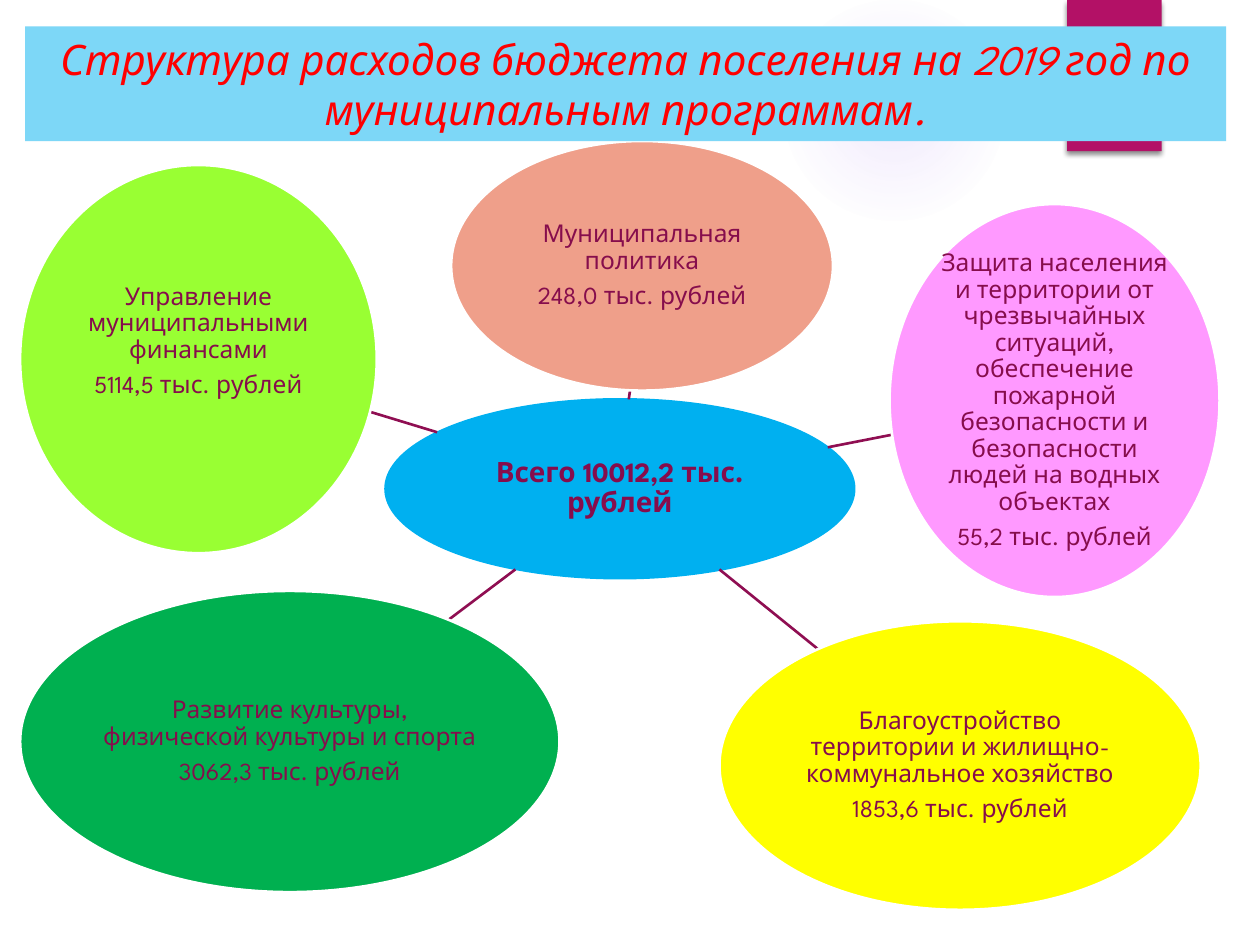
from lxml import etree
from pptx import Presentation
from pptx.dml.color import RGBColor
from pptx.enum import shapes, text
from pptx.oxml import parse_xml
from pptx.oxml.ns import nsdecls, qn
from pptx.util import Pt

FONT = "League Spartan"
WHITE = RGBColor(0xFF, 0xFF, 0xFF)
RED = RGBColor(0xFF, 0x00, 0x00)
SKY = RGBColor(0x7D, 0xD7, 0xF7)
RIBBON = RGBColor(0xB3, 0x11, 0x66)
PLUM = RGBColor(0x86, 0x0D, 0x4C)
SPOKE = RGBColor(0x8F, 0x0E, 0x52)
BLUE = RGBColor(0x00, 0xB0, 0xF0)
SALMON = RGBColor(0xEF, 0x9F, 0x8A)
GREEN = RGBColor(0x00, 0xB0, 0x50)
LIME = RGBColor(0x99, 0xFF, 0x33)
PINK = RGBColor(0xFF, 0x99, 0xFF)
YELLOW = RGBColor(0xFF, 0xFF, 0x00)

TITLE = "Структура расходов бюджета поселения на 2019 год по муниципальным программам."

# Programme, amount, fill, (left, top, width, height), extra bottom inset
PROGRAMMES = [
    ("Муниципальная политика", "248,0 тыс. рублей",
     SALMON, (257.8, 80.6, 218.2, 142.6), 0),
    ("Развитие культуры, физической культуры и спорта", "3062,3 тыс. рублей",
     GREEN, (11.5, 337.7, 308.2, 172.1), 0),
    ("Управление муниципальными финансами", "5114,5 тыс. рублей",
     LIME, (11.5, 94.3, 203.8, 221.8), 20),
    ("Защита населения и территории от чрезвычайных ситуаций, обеспечение "
     "пожарной безопасности и безопасности людей на водных объектах",
     "55,2 тыс. рублей", PINK, (508.3, 116.6, 188.6, 224.6), 0),
    ("Благоустройство территории и жилищно-коммунальное хозяйство",
     "1853,6 тыс. рублей", YELLOW, (411.1, 355, 275, 164.9), 0),
]

# Spokes from the total to each programme: x1, y1, x2, y2
SPOKES = [
    (359.3, 228.2, 360, 223.2),
    (294.5, 325.4, 256.3, 354.2),
    (249.8, 247, 211.7, 235.4),
    (473, 255.6, 509.8, 248.4),
    (411.1, 325.4, 467.3, 370.8),
]


def write(frame, *lines, size=14, color=PLUM, bold=False, italic=False,
          spacing=0.9, after=5):
    """Fill a text frame with centred paragraphs."""
    frame.word_wrap = True
    frame.vertical_anchor = text.MSO_ANCHOR.MIDDLE
    for i, line in enumerate(lines):
        paragraph = frame.paragraphs[0] if i == 0 else frame.add_paragraph()
        paragraph.alignment = text.PP_ALIGN.CENTER
        paragraph.line_spacing = spacing
        paragraph.space_before = Pt(0)
        paragraph.space_after = Pt(after)
        run = paragraph.add_run()
        run.text = line
        run.font.name = FONT
        run.font.size = Pt(size)
        run.font.bold = bold
        run.font.italic = italic
        run.font.color.rgb = color


def add_figure(slide, kind, box, fill=None, line=None):
    figure = slide.shapes.add_shape(kind, *map(Pt, box))
    figure.shadow.inherit = False
    if fill is None:
        figure.fill.background()
    else:
        figure.fill.solid()
        figure.fill.fore_color.rgb = fill
    if line is None:
        figure.line.fill.background()
    else:
        figure.line.color.rgb = line
        figure.line.width = Pt(1.5)
    return figure


def add_oval(slide, lines, fill, box, line=WHITE, extra_bottom=0, **style):
    oval = add_figure(slide, shapes.MSO_SHAPE.OVAL, box, fill, line)
    frame = oval.text_frame
    frame.margin_left = frame.margin_right = frame.margin_top = Pt(0.7)
    frame.margin_bottom = Pt(0.7 + extra_bottom)
    write(frame, *lines, **style)


def add_spoke(slide, ends):
    spoke = slide.shapes.add_connector(shapes.MSO_CONNECTOR.STRAIGHT, *map(Pt, ends))
    spoke.line.color.rgb = SPOKE
    spoke.line.width = Pt(1.5)
    etree.SubElement(spoke._element.spPr, qn("a:effectLst"))


def add_halo(slide, box):
    """Faint violet circle that fades out towards its edge."""
    halo = add_figure(slide, shapes.MSO_SHAPE.OVAL, box)
    stops = "".join(
        f'<a:gs pos="{pos * 1000}"><a:srgbClr val="9B6BF2">'
        f'<a:alpha val="{alpha * 1000}"/></a:srgbClr></a:gs>'
        for pos, alpha in ((0, 14), (36, 7), (73, 0), (100, 0)))
    gradient = parse_xml(
        f'<a:gradFill {nsdecls("a")}><a:gsLst>{stops}</a:gsLst><a:path path="circle">'
        '<a:fillToRect l="50000" t="50000" r="50000" b="50000"/></a:path></a:gradFill>')
    properties = halo._element.spPr
    properties.replace(properties.find(qn("a:noFill")), gradient)


def add_ribbon(slide, box):
    ribbon = add_figure(slide, shapes.MSO_SHAPE.RECTANGLE, box, RIBBON)
    effects = ribbon._element.spPr.find(qn("a:effectLst"))
    effects.append(parse_xml(
        f'<a:outerShdw {nsdecls("a")} blurRad="{Pt(3)}" dist="{Pt(2)}" dir="5400000" '
        'rotWithShape="0"><a:srgbClr val="000000"><a:alpha val="45000"/></a:srgbClr>'
        '</a:outerShdw>'))


def place_title(slide, box):
    title = slide.shapes.title
    title.left, title.top, title.width, title.height = map(Pt, box)
    title.fill.solid()
    title.fill.fore_color.rgb = SKY
    write(title.text_frame, TITLE, size=24, color=RED, italic=True, spacing=1, after=0)
    title.text_frame.auto_size = text.MSO_AUTO_SIZE.NONE
    # Bring the title in front of the ribbon
    slide.shapes._spTree.append(title._element)


def main():
    deck = Presentation()
    deck.slide_width, deck.slide_height = Pt(720), Pt(540)
    slide = deck.slides.add_slide(deck.slide_layouts[5])

    # Background decoration
    add_halo(slide, (447.8, 0, 126, 126))
    add_ribbon(slide, (609.8, 0, 54, 86.4))

    # Total in the middle, programmes around it
    add_oval(slide, ["Всего 10012,2 тыс. рублей"], BLUE, (220.3, 228.2, 267.8, 102.2),
             line=BLUE, size=16, bold=True)
    for ends in SPOKES:
        add_spoke(slide, ends)
    for name, amount, fill, box, extra_bottom in PROGRAMMES:
        add_oval(slide, [name, amount], fill, box, extra_bottom=extra_bottom)

    place_title(slide, (14.4, 15.1, 686.2, 65.5))
    deck.save("out.pptx")


if __name__ == "__main__":
    main()
